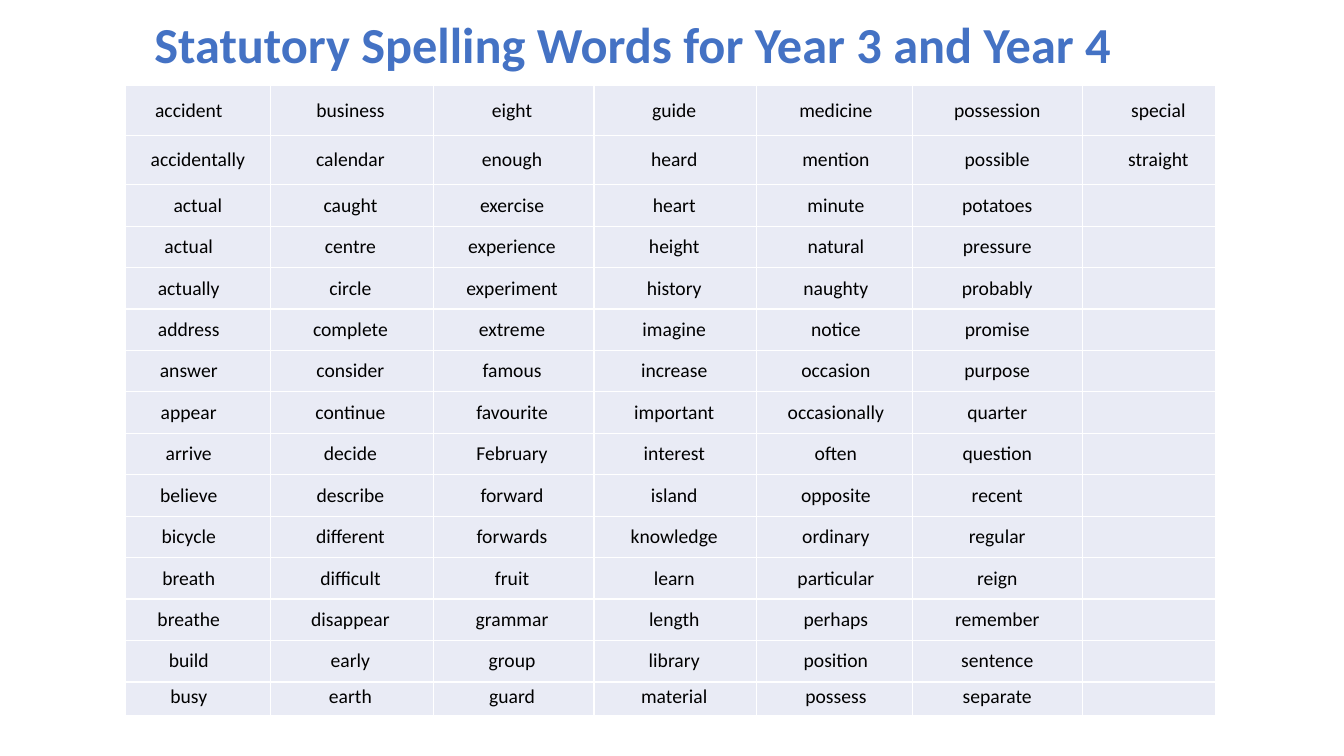
"""Build a one-slide table of statutory spelling words for Years 3 and 4."""
from itertools import zip_longest

from lxml.etree import SubElement
from pptx import Presentation
from pptx.dml.color import RGBColor
from pptx.enum.text import MSO_ANCHOR as Anchor, PP_ALIGN as Align
from pptx.oxml.ns import qn
from pptx.util import Pt

BLUE = RGBColor(0x44, 0x72, 0xC4)
BLACK = RGBColor(0x00, 0x00, 0x00)
WHITE = RGBColor(0xFF, 0xFF, 0xFF)
PALE_BLUE = RGBColor(0xE9, 0xEB, 0xF5)

WORD_COLUMNS = [
    "accident accidentally actual actual actually address answer appear "
    "arrive believe bicycle breath breathe build busy",
    "business calendar caught centre circle complete consider continue "
    "decide describe different difficult disappear early earth",
    "eight enough exercise experience experiment extreme famous favourite "
    "February forward forwards fruit grammar group guard",
    "guide heard heart height history imagine increase important "
    "interest island knowledge learn length library material",
    "medicine mention minute natural naughty notice occasion occasionally "
    "often opposite ordinary particular perhaps position possess",
    "possession possible potatoes pressure probably promise purpose quarter "
    "question recent regular reign remember sentence separate",
    "special straight",
]
COLUMN_WIDTHS = [103.7, 116.6, 114.5, 115.9, 111.6, 121.7, 95]
ROW_HEIGHTS = [35.4] * 2 + [29.6] * 12 + [24]
COLUMN_MARGINS = [(1.5, 14.5), (13.7, 16), (15, 17.5), (17.3, 18.5),
                  (17.3, 15), (15, 15.5), (15, 2)]
UNINDENTED_CELLS = {(1, 0), (2, 0)}
LAST_LINE_SPACING = 14.6


class SlideBuilder:
    """Hold the text style and the current slide."""

    font_name = "Calibri"

    def __init__(self, slide):
        self.slide = slide

    def style(self, paragraph, size, color, bold=False):
        """Centre a paragraph and set its font."""
        paragraph.alignment = Align.CENTER
        font = paragraph.font
        font.name, font.size, font.bold = self.font_name, Pt(size), bold
        font.color.rgb = color

    def title(self, text, left, top, width, height):
        """Add the heading."""
        box = self.slide.shapes.add_textbox(
            Pt(left), Pt(top), Pt(width), Pt(height))
        box.text_frame.word_wrap = True
        paragraph = box.text_frame.paragraphs[0]
        paragraph.text = text
        self.style(paragraph, 36, BLUE, bold=True)

    def borders(self, cell, color, width):
        """Draw all four borders of a cell."""
        properties = cell._tc.get_or_add_tcPr()
        for position, side in enumerate(("lnL", "lnR", "lnT", "lnB")):
            line = SubElement(properties, qn(f"a:{side}"), w=str(Pt(width)))
            fill = SubElement(line, qn("a:solidFill"))
            SubElement(fill, qn("a:srgbClr"), val=str(color))
            properties.insert(position, line)

    def cell(self, cell, word, margins):
        """Fill one table cell with a word."""
        cell.margin_left, cell.margin_right = map(Pt, margins)
        cell.margin_top = cell.margin_bottom = 0
        cell.vertical_anchor = Anchor.MIDDLE
        cell.fill.solid()
        cell.fill.fore_color.rgb = PALE_BLUE
        self.borders(cell, WHITE, 1)
        paragraph = cell.text_frame.paragraphs[0]
        if word:
            paragraph.text = word
        self.style(paragraph, 14, BLACK)
        return paragraph

    def word_table(self, left, top):
        """Add the table of words, one alphabetical run per column."""
        rows = list(zip_longest(*(words.split() for words in WORD_COLUMNS),
                                fillvalue=""))
        table = self.slide.shapes.add_table(
            len(rows), len(COLUMN_WIDTHS), Pt(left), Pt(top),
            Pt(sum(COLUMN_WIDTHS)), Pt(sum(ROW_HEIGHTS))).table
        table.first_row = table.horz_banding = False
        for column, width in zip(table.columns, COLUMN_WIDTHS):
            column.width = Pt(width)
        for row, height in zip(table.rows, ROW_HEIGHTS):
            row.height = Pt(height)
        for row_index, words in enumerate(rows):
            for column_index, word in enumerate(words):
                place = row_index, column_index
                margins = ((0, 0) if place in UNINDENTED_CELLS
                           else COLUMN_MARGINS[column_index])
                paragraph = self.cell(table.cell(*place), word, margins)
                if row_index == len(rows) - 1:
                    paragraph.line_spacing = Pt(LAST_LINE_SPACING)


def main():
    """Create and save the presentation."""
    presentation = Presentation()
    presentation.slide_width, presentation.slide_height = Pt(960), Pt(540)
    slide = presentation.slides.add_slide(presentation.slide_layouts[6])
    builder = SlideBuilder(slide)
    builder.word_table(89.5, 61.2)
    builder.title("Statutory Spelling Words for Year 3 and Year 4",
                  -7.9, 5.8, 920.2, 51.1)
    presentation.save("out.pptx")


if __name__ == "__main__":
    main()
